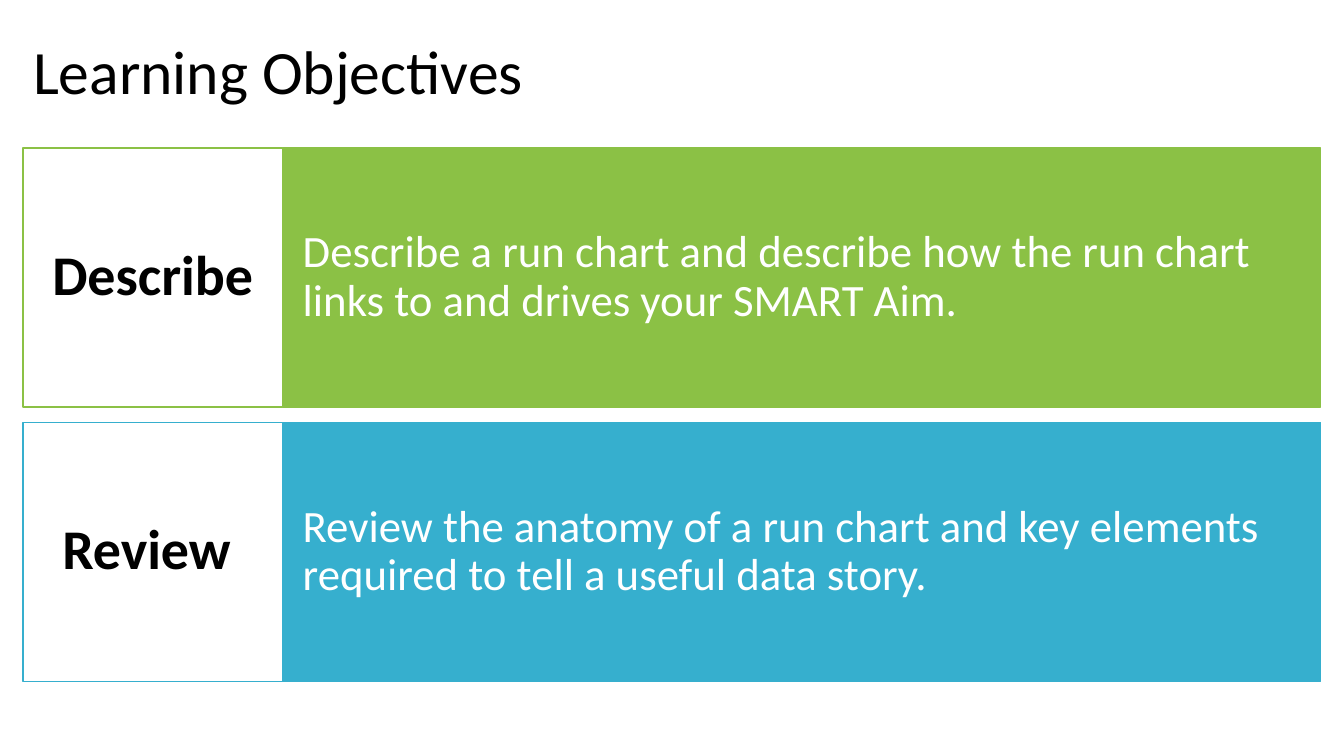
"""Build the Learning Objectives slide."""
from dataclasses import dataclass

from pptx import Presentation
from pptx.dml.color import RGBColor
from pptx.enum import shapes, text
from pptx.util import Cm, Pt

TITLE = "Learning Objectives"
OBJECTIVES = [
    ("Describe", "Describe a run chart and describe how the run chart "
     "links to and drives your SMART Aim."),
    ("Review ", "Review the anatomy of a run chart and key elements "
     "required to tell a useful data story."),
]


@dataclass(frozen=True)
class Theme:
    font: str = "Calibri"
    black: str = "000000"
    white: str = "FFFFFF"
    accents: tuple = ("8BC145", "36AFCE")
    title_size: int = 44
    verb_size: int = 40
    body_size: int = 32


THEME = Theme()
LEFT, TOP = 0.58, 3.73
VERB_W, BODY_W = 6.54, 26.16
ROW_H, GAP = 6.53, 0.38


def write(sp, words, size, color, align, bold=False, after=0):
    tf = sp.text_frame
    tf.text = words
    tf.word_wrap = True
    tf.auto_size = text.MSO_AUTO_SIZE.NONE
    tf.vertical_anchor = text.MSO_ANCHOR.MIDDLE
    p = tf.paragraphs[0]
    p.alignment, p.line_spacing, p.space_after = align, 0.9, Pt(after)
    font = p.runs[0].font
    font.name, font.size, font.bold = THEME.font, Pt(size), bold
    font.color.rgb = RGBColor.from_string(color)


def add_box(s, x, y, w, fill, line, inset_x, inset_y):
    sp = s.shapes.add_shape(shapes.MSO_SHAPE.RECTANGLE,
                            Cm(x), Cm(y), Cm(w), Cm(ROW_H))
    sp.shadow.inherit = False
    sp.fill.solid()
    sp.fill.fore_color.rgb = RGBColor.from_string(fill)
    sp.line.color.rgb = RGBColor.from_string(line)
    sp.line.width = Pt(1)
    tf = sp.text_frame
    tf.margin_left = tf.margin_right = Cm(inset_x)
    tf.margin_top = tf.margin_bottom = Cm(inset_y)
    return sp


def main():
    prs = Presentation()
    prs.slide_width, prs.slide_height = Cm(33.87), Cm(19.05)
    s = prs.slides.add_slide(prs.slide_layouts[5])
    left, center = text.PP_ALIGN.LEFT, text.PP_ALIGN.CENTER

    title = s.shapes.title
    title.left, title.top = Cm(LEFT), Cm(0.05)
    title.width, title.height = Cm(21.89), Cm(3.68)
    write(title, TITLE, THEME.title_size, THEME.black, left, after=6)

    for i, ((verb, body), accent) in enumerate(zip(OBJECTIVES, THEME.accents)):
        y = TOP + i * (ROW_H + GAP)
        sp = add_box(s, LEFT + VERB_W, y, BODY_W, accent, accent, 0.51, 1.65)
        write(sp, body, THEME.body_size, THEME.white, left)
        sp = add_box(s, LEFT, y, VERB_W, THEME.white, accent, 0.36, 0.64)
        write(sp, verb, THEME.verb_size, THEME.black, center, bold=True)

    prs.save("out.pptx")


if __name__ == "__main__":
    main()
